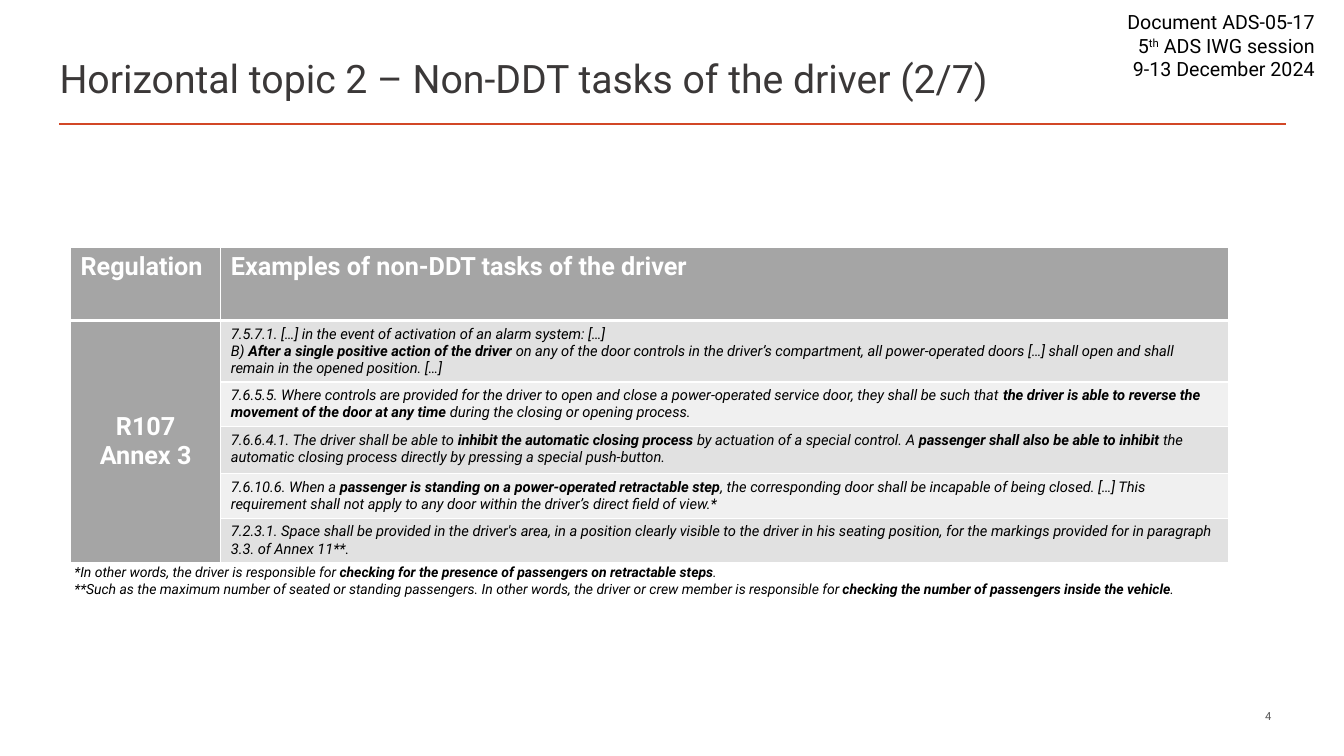
from dataclasses import dataclass

from lxml import etree
from pptx import Presentation
from pptx.dml.color import RGBColor
from pptx.enum.shapes import MSO_CONNECTOR
from pptx.enum.text import MSO_ANCHOR, MSO_AUTO_SIZE, PP_ALIGN
from pptx.oxml.ns import qn
from pptx.util import Emu, Pt

STRAIGHT = MSO_CONNECTOR.STRAIGHT
TOP, MIDDLE = MSO_ANCHOR.TOP, MSO_ANCHOR.MIDDLE
LEFT, CENTER, RIGHT = PP_ALIGN.LEFT, PP_ALIGN.CENTER, PP_ALIGN.RIGHT
NO_FIT, GROW = MSO_AUTO_SIZE.NONE, MSO_AUTO_SIZE.SHAPE_TO_FIT_TEXT

FONT = "Roboto"
BLACK, WHITE = "000000", "FFFFFF"
TITLE_GRAY, NUMBER_GRAY, RULE_RED = "3B3838", "595959", "D24726"
HEADER_GRAY = "A5A5A5"
BANDS = ("E1E1E1", "F0F0F0")
EMU_PER_PX = 9144  # 100 px to the inch


@dataclass(frozen=True)
class Span:
    text: str
    bold: bool = False
    raised: bool = False


@dataclass(frozen=True)
class Style:
    size: float
    color: str = BLACK
    bold: bool = False
    italic: bool = False
    align: PP_ALIGN = LEFT


@dataclass(frozen=True)
class TextBox:
    left: int
    top: int
    width: int
    height: int
    style: Style
    lines: tuple
    wrap: bool = True
    fit: MSO_AUTO_SIZE = GROW
    anchor: MSO_ANCHOR = TOP


@dataclass(frozen=True)
class Example:
    height: int
    lines: tuple


HEADING = Style(18, WHITE, bold=True)
SIDE_HEADING = Style(18, WHITE, bold=True, align=CENTER)
QUOTE = Style(10.5, italic=True)

TITLE = TextBox(
    49, 47, 1226, 61, Style(28, TITLE_GRAY),
    ((Span("Horizontal topic 2 – Non-DDT tasks of the driver (2/7)"),),),
    fit=NO_FIT, anchor=MIDDLE)

BOXES = (
    TextBox(1103, 5, 211, 81, Style(14, align=RIGHT), (
        (Span("Document ADS-05-17"),),
        (Span("5"), Span("th", raised=True), Span(" ADS IWG session")),
        (Span("9-13 December 2024"),),
    ), wrap=False),
    TextBox(913, 703, 358, 15, Style(8, NUMBER_GRAY, align=RIGHT),
            ((Span("4"),),), fit=NO_FIT, anchor=MIDDLE),
    TextBox(64, 554, 1155, 44, Style(10, italic=True), (
        (Span("*In other words, the driver is responsible for "),
         Span("checking for the presence of passengers on retractable steps", bold=True),
         Span(".")),
        (Span("**Such as the maximum number of seated or standing passengers. "
              "In other words, the driver or crew member is responsible for "),
         Span("checking the number of passengers inside the vehicle", bold=True),
         Span(".")),
    )),
)

TABLE_LEFT, TABLE_TOP, HEADER_HEIGHT = 70, 245, 73
COLUMN_WIDTHS = (149, 1000)
HEADINGS = ("Regulation", "Examples of non-DDT tasks of the driver")
REGULATION = "R107 Annex 3"
EXAMPLES = (
    Example(39, (
        (Span("7.5.7.1. […] in the event of activation of an alarm system: […]"),),
        (Span("B) "),
         Span("After a single positive action of the driver ", bold=True),
         Span("on any of the door controls in the driver’s compartment, all "
              "power-operated doors […] shall open and shall remain in the "
              "opened position. […]")),
    )),
    Example(39, (
        (Span("7.6.5.5. Where controls are provided for the driver to open and close "
              "a power-operated service door, they shall be such that "),
         Span("the driver is able to reverse the movement of the door at any time ",
              bold=True),
         Span("during the closing or opening process.")),
    )),
    Example(47, (
        (Span("7.6.6.4.1. The driver shall be able to "),
         Span("inhibit the automatic closing process ", bold=True),
         Span("by actuation of a special control. A "),
         Span("passenger shall also be able to inhibit ", bold=True),
         Span("the automatic closing process directly by pressing a special "
              "push-button.")),
    )),
    Example(39, (
        (Span("7.6.10.6. When a "),
         Span("passenger is standing on a power-operated retractable step", bold=True),
         Span(", the corresponding door shall be incapable of being closed. […] This "
              "requirement shall not apply to any door within the driver’s direct "
              "field of view.*")),
    )),
    Example(39, (
        (Span("7.2.3.1. Space shall be provided in the driver's area, in a position "
              "clearly visible to the driver in his seating position, for the markings "
              "provided for in paragraph 3.3. of Annex 11**."),),
    )),
)


def px(length: int) -> Emu:
    return Emu(length * EMU_PER_PX)


def rgb(color: str) -> RGBColor:
    return RGBColor.from_string(color)


def write(frame, lines: tuple, style: Style) -> None:
    for index, spans in enumerate(lines):
        para = frame.add_paragraph() if index else frame.paragraphs[0]
        para.alignment = style.align
        for span in spans:
            run = para.add_run()
            run.text = span.text
            font = run.font
            font.name, font.size = FONT, Pt(style.size)
            font.bold, font.italic = style.bold or span.bold, style.italic
            font.color.rgb = rgb(style.color)
            if span.raised:
                run._r.get_or_add_rPr().set("baseline", "30000")


def fill_box(shape, box: TextBox) -> None:
    """Place a text shape and write its text."""
    shape.left, shape.top = px(box.left), px(box.top)
    shape.width, shape.height = px(box.width), px(box.height)
    frame = shape.text_frame
    frame.word_wrap, frame.auto_size = box.wrap, box.fit
    frame.vertical_anchor = box.anchor
    write(frame, box.lines, box.style)


def format_cell(cell, color: str, top: int = 1, bottom: int = 1) -> None:
    """Give a cell white borders, with widths in points, and a fill."""
    properties = cell._tc.get_or_add_tcPr()
    for side, width in (("L", 1), ("R", 1), ("T", top), ("B", bottom)):
        border = etree.SubElement(properties, qn(f"a:ln{side}"), w=str(Pt(width)))
        fill = etree.SubElement(border, qn("a:solidFill"))
        etree.SubElement(fill, qn("a:srgbClr"), val=WHITE)
    cell.fill.solid()
    cell.fill.fore_color.rgb = rgb(color)


def add_rule(slide) -> None:
    rule = slide.shapes.add_connector(STRAIGHT, px(59), px(123), px(1275), px(123))
    rule.line.color.rgb = rgb(RULE_RED)
    rule.line.width = Pt(2)
    etree.SubElement(rule._element.spPr, qn("a:effectLst"))


def add_examples_table(slide) -> None:
    heights = (HEADER_HEIGHT, *(example.height for example in EXAMPLES))
    table = slide.shapes.add_table(
        len(heights), len(COLUMN_WIDTHS), px(TABLE_LEFT), px(TABLE_TOP),
        px(sum(COLUMN_WIDTHS)), px(sum(heights))).table
    for column, width in zip(table.columns, COLUMN_WIDTHS):
        column.width = px(width)
    for row, height in zip(table.rows, heights):
        row.height = px(height)

    for index, heading in enumerate(HEADINGS):
        cell = table.cell(0, index)
        format_cell(cell, HEADER_GRAY, bottom=3)
        write(cell.text_frame, ((Span(heading),),), HEADING)

    for index, example in enumerate(EXAMPLES, start=1):
        top = 3 if index == 1 else 1
        format_cell(table.cell(index, 0), HEADER_GRAY, top=top)
        cell = table.cell(index, 1)
        format_cell(cell, BANDS[(index - 1) % len(BANDS)], top=top)
        write(cell.text_frame, example.lines, QUOTE)

    regulation = table.cell(1, 0)
    regulation.merge(table.cell(len(EXAMPLES), 0))
    regulation.vertical_anchor = MIDDLE
    write(regulation.text_frame, ((Span(REGULATION),),), SIDE_HEADING)


def main() -> None:
    deck = Presentation()
    deck.slide_width, deck.slide_height = px(1333), px(750)
    page = deck.slides.add_slide(deck.slide_layouts[5])
    fill_box(page.shapes.title, TITLE)
    add_rule(page)
    add_examples_table(page)
    for box in BOXES:
        fill_box(page.shapes.add_textbox(0, 0, 0, 0), box)
    deck.save("out.pptx")


if __name__ == "__main__":
    main()
